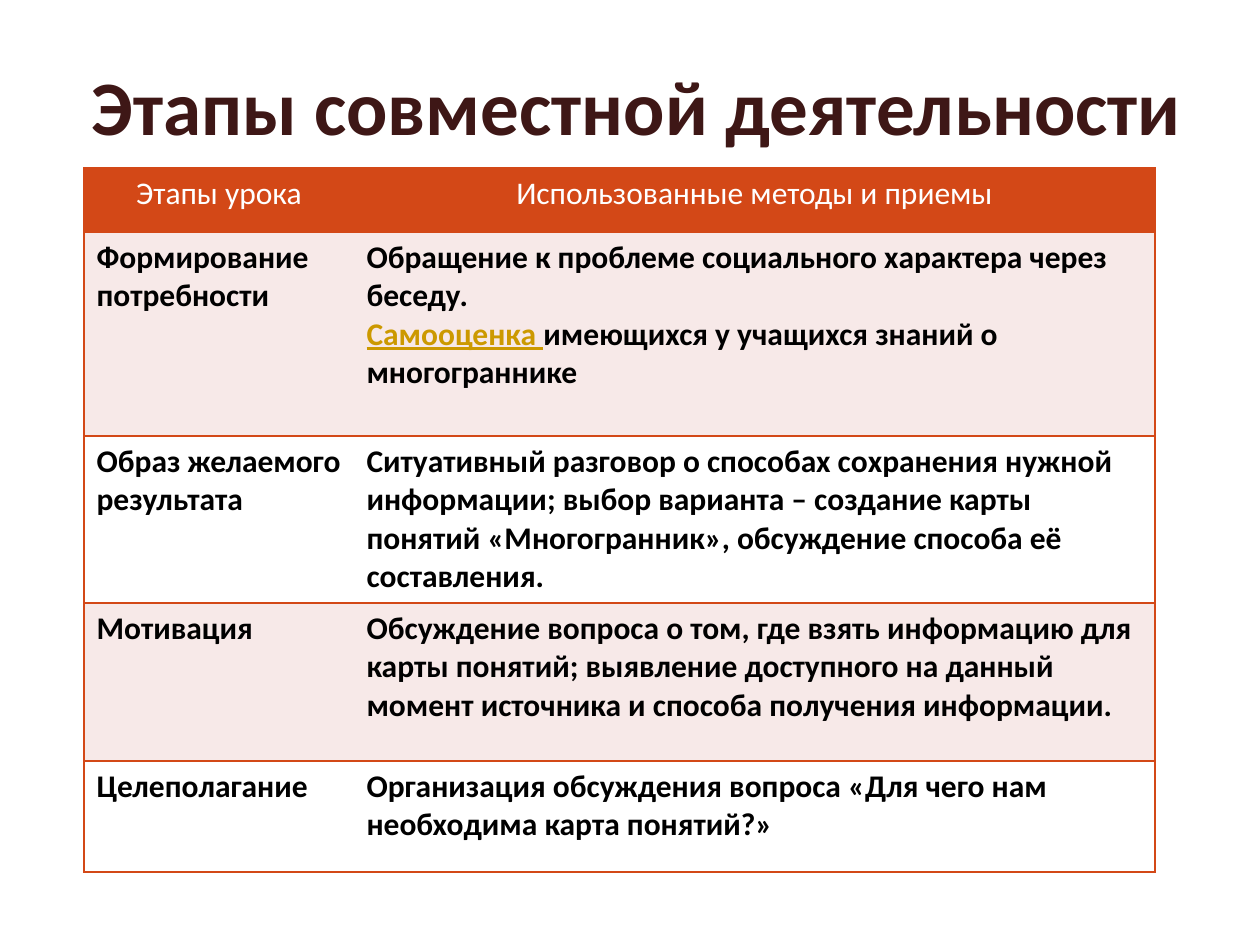
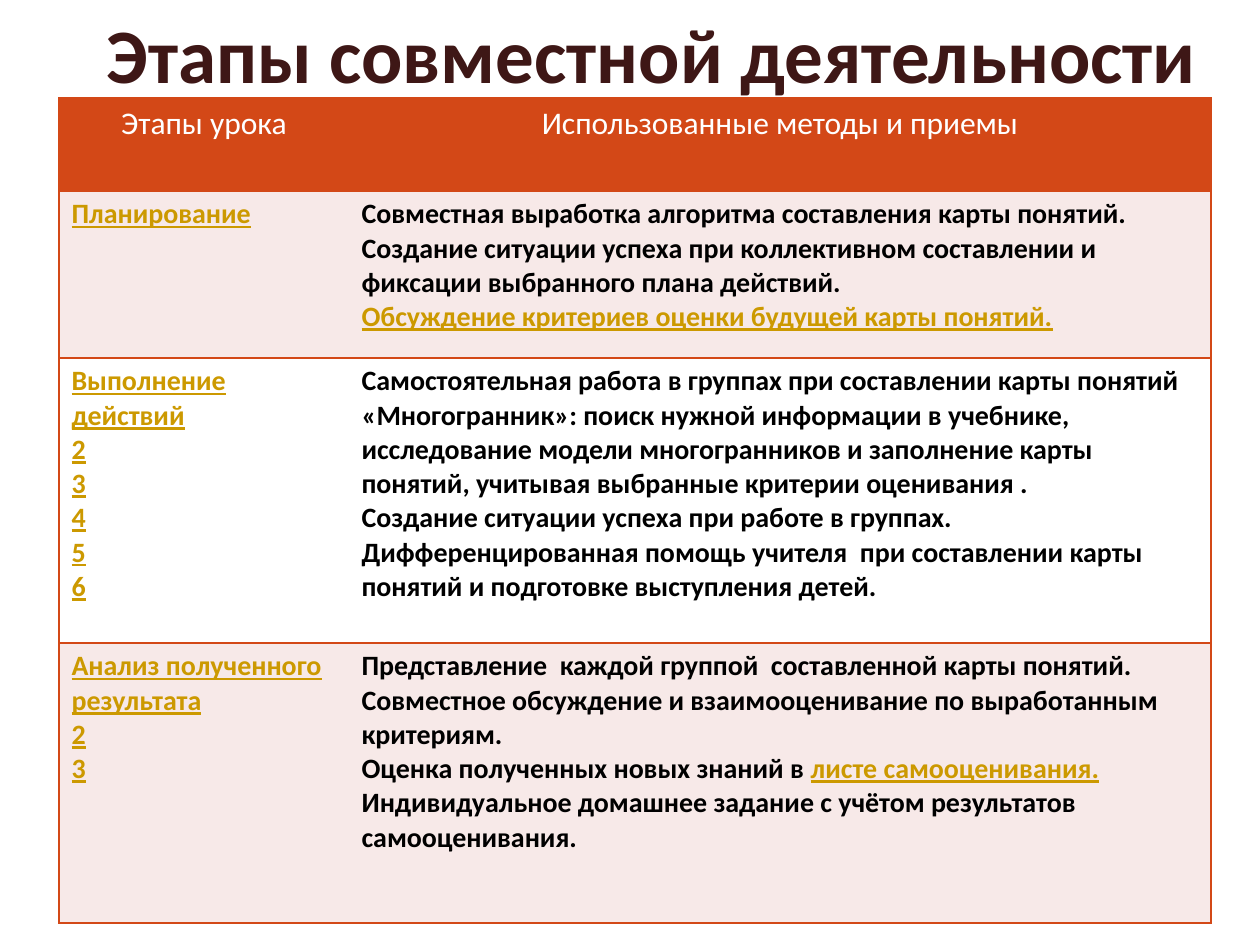
from lxml import etree
from pptx import Presentation
from pptx.dml.color import RGBColor
from pptx.enum.text import MSO_ANCHOR as Anchor, PP_ALIGN as Align
from pptx.oxml.ns import qn
from pptx.util import Pt

PX = 914400 / 126
FONT = "Calibri"
COLORS = {
    "title": "3E1716",
    "accent": "D34817",
    "band": "F7E9E8",
    "white": "FFFFFF",
    "text": "000000",
    "link": "CC9900",
}
TITLE = "Этапы совместной деятельности"
HEADINGS = ("Этапы урока", "Использованные методы и приемы")
LINK_MARK = "|"

FIRST_STAGES = [
    (["Формирование потребности"],
     ["Обращение к проблеме социального характера через беседу.",
      "|Самооценка |имеющихся у учащихся знаний о многограннике"]),
    (["Образ желаемого результата"],
     ["Ситуативный разговор о способах сохранения нужной информации; выбор варианта – "
      "создание карты понятий «Многогранник», обсуждение способа её составления."]),
    (["Мотивация"],
     ["Обсуждение вопроса о том, где взять информацию для карты понятий; выявление "
      "доступного на данный момент источника и способа получения информации."]),
    (["Целеполагание"],
     ["Организация обсуждения вопроса «Для чего нам необходима карта понятий?»"]),
]
LAST_STAGES = [
    (["|Планирование|"],
     ["Совместная выработка алгоритма составления карты понятий.",
      "Создание ситуации успеха при коллективном составлении и фиксации выбранного "
      "плана действий.",
      "|Обсуждение критериев оценки будущей карты понятий.|"]),
    (["|Выполнение действий|", "|2|", "|3|", "|4|", "|5|", "|6|"],
     ["Самостоятельная работа в группах при составлении карты понятий «Многогранник»: "
      "поиск нужной информации в учебнике, исследование модели многогранников и "
      "заполнение карты понятий, учитывая выбранные критерии оценивания .",
      "Создание ситуации успеха при работе в группах.",
      "Дифференцированная помощь учителя  при составлении карты понятий и подготовке "
      "выступления детей."]),
    (["|Анализ полученного результата|", "|2|", "|3|"],
     ["Представление  каждой группой  составленной карты понятий.",
      "Совместное обсуждение и взаимооценивание по выработанным критериям.",
      "Оценка полученных новых знаний в |листе самооценивания. |Индивидуальное домашнее "
      "задание с учётом результатов самооценивания."]),
]
PAGES = [
    {"title_box": (73, 32, 1128, 145), "table_box": (84, 168, 1071, 704),
     "stage_width": 270, "heights": (64, 204, 167, 158, 111),
     "size": 18, "stages": FIRST_STAGES},
    {"title_box": (88, 0, 1128, 106), "table_box": (59, 98, 1152, 825),
     "stage_width": 290, "heights": (93, 167, 285, 280),
     "size": 16, "stages": LAST_STAGES},
]


def px(length):
    return round(length * PX)


def add_span(para, text, color, **formats):
    span = para.add_run()
    span.text = text
    for name, value in {"name": FONT, **formats}.items():
        setattr(span.font, name, value)
    span.font.color.rgb = RGBColor.from_string(COLORS[color])


def write_paragraphs(frame, lines, color, align, **formats):
    for index, line in enumerate(lines):
        para = frame.add_paragraph() if index else frame.paragraphs[0]
        para.alignment = align
        for order, part in enumerate(line.split(LINK_MARK)):
            if part:
                linked = order % 2 == 1
                add_span(para, part, "link" if linked else color,
                         underline=linked, **formats)


def set_borders(cell, hidden_side):
    properties = cell._tc.get_or_add_tcPr()
    for index, side in enumerate("LRTB"):
        line = etree.Element(qn(f"a:ln{side}"), w=str(Pt(1)))
        if side == hidden_side:
            etree.SubElement(line, qn("a:noFill"))
        else:
            fill = etree.SubElement(line, qn("a:solidFill"))
            etree.SubElement(fill, qn("a:srgbClr"), val=COLORS["accent"])
        properties.insert(index, line)


def fill_cell(cell, column, background, lines, color, align, **formats):
    cell.fill.solid()
    cell.fill.fore_color.rgb = RGBColor.from_string(COLORS[background])
    set_borders(cell, "L" if column else "R")
    write_paragraphs(cell.text_frame, lines, color, align, **formats)


def add_title(page, box):
    frame = page.shapes.add_textbox(*map(px, box)).text_frame
    for name, value in {"word_wrap": True, "vertical_anchor": Anchor.MIDDLE}.items():
        setattr(frame, name, value)
    write_paragraphs(frame, [TITLE], "title", Align.CENTER, size=Pt(44), bold=True)


def add_stage_table(page, box, stage_width, heights, size, stages):
    table = page.shapes.add_table(len(heights), len(HEADINGS), *map(px, box)).table
    for name in ("first_row", "horz_banding"):
        setattr(table, name, False)
    for column, width in zip(table.columns, (stage_width, box[2] - stage_width)):
        column.width = px(width)
    for row, height in zip(table.rows, heights):
        row.height = px(height)
    for column, heading in enumerate(HEADINGS):
        fill_cell(table.cell(0, column), column, "accent", [heading], "white",
                  Align.CENTER, size=Pt(18), bold=False)
    for row, stage in enumerate(stages, 1):
        background = "band" if row % 2 else "white"
        for column, lines in enumerate(stage):
            fill_cell(table.cell(row, column), column, background, lines, "text",
                      Align.LEFT, size=Pt(size), bold=True)


def add_stage_page(deck, title_box, table_box, **content):
    page = deck.slides.add_slide(deck.slide_layouts[6])
    add_title(page, title_box)
    add_stage_table(page, table_box, **content)


def main():
    deck = Presentation()
    deck.slide_width, deck.slide_height = px(1260), px(945)
    for content in PAGES:
        add_stage_page(deck, **content)
    deck.save("out.pptx")


if __name__ == "__main__":
    main()
